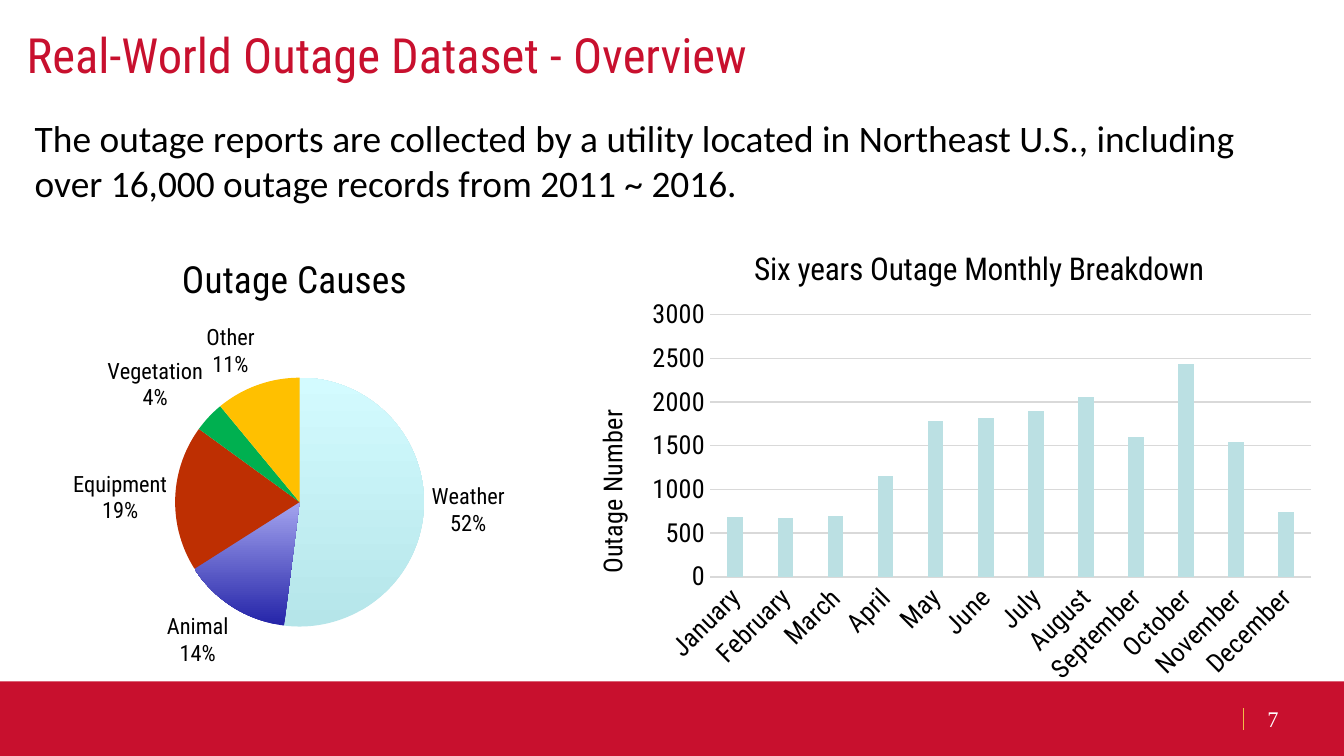
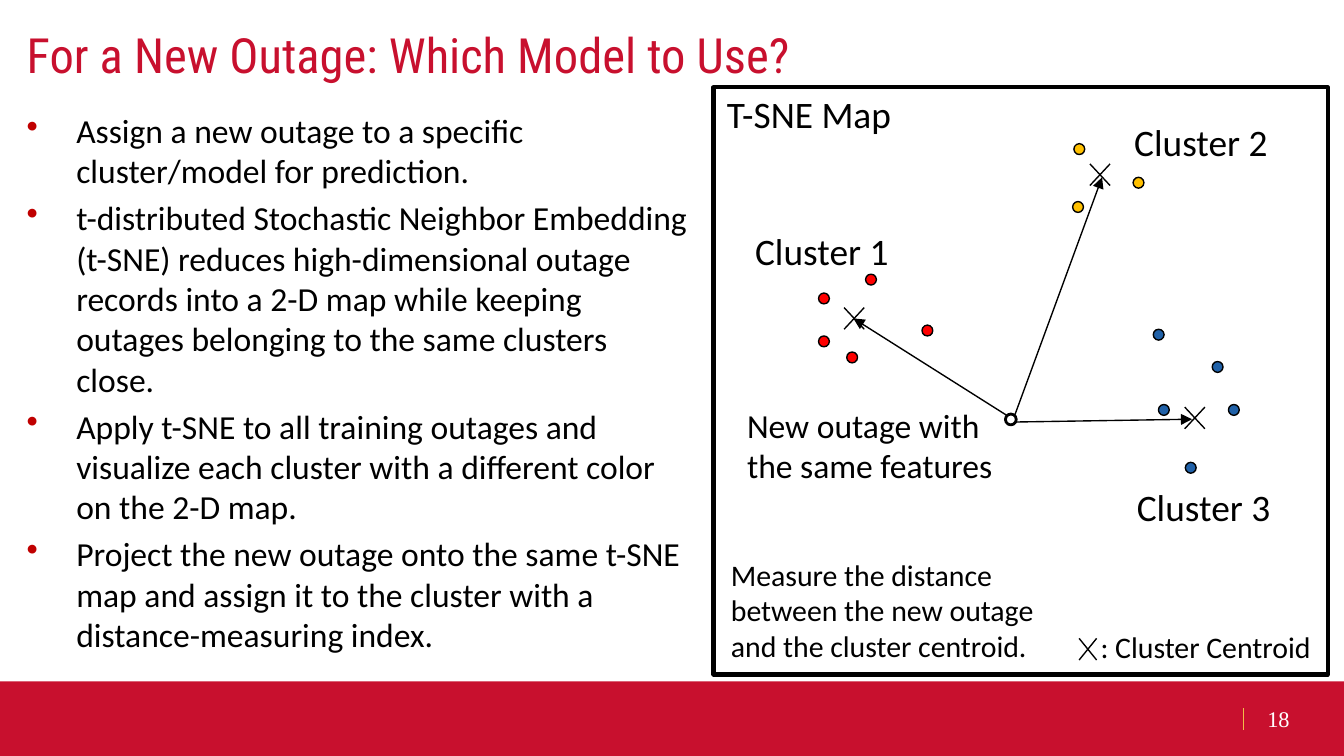
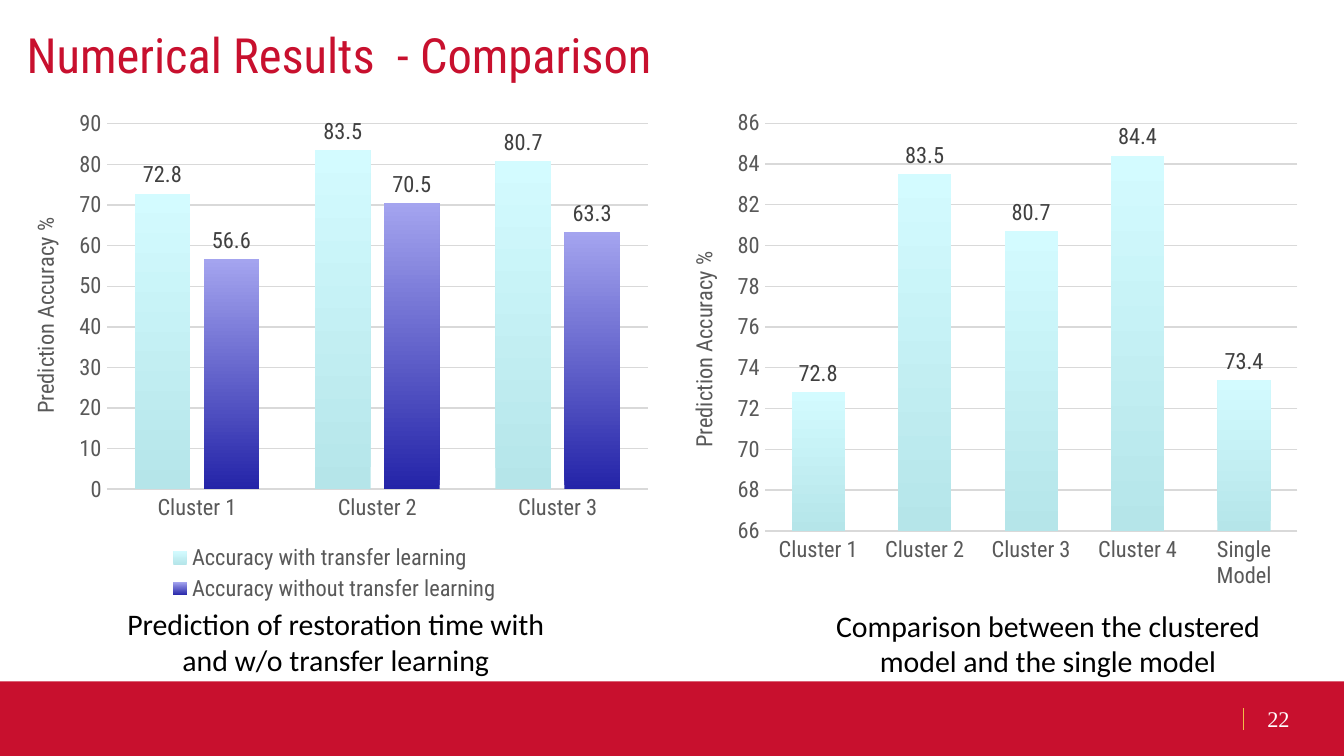
import pptx
import pptx.chart.data
import pptx.dml.color
import pptx.enum.chart
import pptx.enum.shapes
import pptx.enum.text
import pptx.oxml.ns
import pptx.oxml.xmlchemy
import pptx.util
from lxml import etree

Pt = pptx.util.Pt
qn = pptx.oxml.ns.qn
CHART = pptx.enum.chart.XL_CHART_TYPE
SHAPE = pptx.enum.shapes.MSO_SHAPE

COLORS = {
    "cardinal": "C8102E", "gold": "F1BE48", "white": "FFFFFF", "black": "000000",
    "bullet": "C00000", "grid": "D9D9D9", "axis": "595959", "label": "404040",
    "red": "FF0000", "yellow": "FFC000", "blue": "2061A8",
    "rust": "BE2F02", "green": "00B050", "teal": "BBE0E3",
    "ice dark": "B5E5E9", "ice light": "D3FBFF",
    "indigo dark": "2424A8", "indigo light": "A4A4EF",
}
ICE = ("ice dark", "ice light")
INDIGO = ("indigo dark", "indigo light")
HEADING, BODY, NUMBER = "Roboto Condensed", "Calibri", "Times New Roman"
DOT = 5.8


def rgb(name):
    return pptx.dml.color.RGBColor.from_string(COLORS[name])


def set_font(font, size, color="black", face=HEADING):
    font.size, font.name, font.bold = Pt(size), face, False
    font.color.rgb = rgb(color)


def set_fill(fill, color):
    """Fill with one colour, or upwards from the first of a pair to the second."""
    if isinstance(color, tuple):
        fill.gradient()
        fill.gradient_angle = 90
        for stop, name in zip(fill.gradient_stops, color):
            stop.color.rgb = rgb(name)
    else:
        fill.solid()
        fill.fore_color.rgb = rgb(color)


def set_line(line, color, width):
    line.color.rgb = rgb(color)
    line.width = Pt(width)


def place(parent, inner=False, **fractions):
    """Fix a chart part at fractions of the chart's size."""
    layout = parent.find(qn("c:layout"))
    if layout is None:
        layout = etree.Element(qn("c:layout"))
        parent.insert(0 if inner else 1, layout)
    manual = etree.SubElement(layout, qn("c:manualLayout"))
    settings = {"layoutTarget": "inner"} if inner else {}
    settings.update(xMode="edge", yMode="edge", **fractions)
    for key, value in settings.items():
        etree.SubElement(manual, qn("c:" + key)).set("val", str(value))


def turn(element, query, degrees):
    for body in element.xpath(query):
        body.set("rot", str(degrees * 60000))
        body.set("vert", "horz")


class Deck:
    def __init__(self):
        self.show = pptx.Presentation()
        self.show.slide_width, self.show.slide_height = Pt(720), Pt(405)
        self.slide = None

    def start(self, title, number):
        self.slide = self.show.slides.add_slide(self.show.slide_layouts[6])
        self.shape(SHAPE.RECTANGLE, (0, 365, 720, 40), "cardinal")
        self.line((666, 379.4), (666, 391), "gold")
        page = self.text((671.8, 374.4, 41.8, 21.6), [str(number)], 12, "white", NUMBER)
        page.vertical_anchor = pptx.enum.text.MSO_ANCHOR.MIDDLE
        self.text((7.2, 10.1, 683.3, 36.7), [title], 26, "cardinal", HEADING)

    def text(self, box, lines, size, color="black", face=BODY, center=False,
             bullets=False, wrap=True):
        frame = self.slide.shapes.add_textbox(*map(Pt, box)).text_frame
        frame.word_wrap = wrap
        frame.text = "\n".join(lines)
        for index, paragraph in enumerate(frame.paragraphs):
            if center:
                paragraph.alignment = pptx.enum.text.PP_ALIGN.CENTER
            if bullets:
                if index:
                    paragraph.space_before = Pt(size * 0.2)
                self.bullet(paragraph)
            set_font(paragraph.runs[0].font, size, color, face)
        return frame

    def bullet(self, paragraph, indent=26.6):
        properties = paragraph._p.get_or_add_pPr()
        properties.set("marL", str(Pt(indent)))
        properties.set("indent", str(-Pt(indent)))
        tint = etree.SubElement(properties, qn("a:buClr"))
        etree.SubElement(tint, qn("a:srgbClr")).set("val", COLORS["bullet"])
        etree.SubElement(properties, qn("a:buChar")).set("char", "•")

    def shape(self, kind, box, fill=None, line=None, width=0.75):
        shape = self.slide.shapes.add_shape(kind, *map(Pt, box))
        shape.shadow.inherit = False
        if fill:
            set_fill(shape.fill, fill)
        else:
            shape.fill.background()
        if line:
            set_line(shape.line, line, width)
        else:
            shape.line.fill.background()

    def dot(self, left, top, color, width=0.75):
        self.shape(SHAPE.OVAL, (left, top, DOT, DOT), color, "black", width)

    def line(self, start, end, color="black", arrow=False):
        straight = pptx.enum.shapes.MSO_CONNECTOR.STRAIGHT
        line = self.slide.shapes.add_connector(straight, *map(Pt, start + end))
        set_line(line.line, color, 0.75)
        if arrow:
            tip = etree.SubElement(line.line._get_or_add_ln(), qn("a:tailEnd"))
            tip.set("type", "triangle")
        etree.SubElement(line._element.spPr, qn("a:effectLst"))

    def cross(self, x, y, half_width=5.4, half_height=5.8):
        for rise in (half_height, -half_height):
            self.line((x - half_width, y - rise), (x + half_width, y + rise))

    def chart(self, kind, box, categories, series, plot, title=None, size=10):
        """series maps names to values; plot is the inner area; title is (text, size, x, y)."""
        data = pptx.chart.data.CategoryChartData()
        data.categories = categories
        for name, values in series.items():
            data.add_series(name, values)
        chart = self.slide.shapes.add_chart(kind, *map(Pt, box), data).chart
        set_font(chart.font, size)
        chart.has_legend = False
        chart.has_title = title is not None
        space = chart._chartSpace
        if title:
            words, title_size, x, y = title
            chart.chart_title.text_frame.text = words
            set_font(chart.chart_title.text_frame.paragraphs[0].runs[0].font, title_size)
            place(space.xpath("c:chart/c:title")[0], x=x, y=y)
        x, y, w, h = plot
        place(space.xpath("c:chart/c:plotArea")[0], inner=True, x=x, y=y, w=w, h=h)
        return chart

    def columns(self, box, categories, series, fills, plot, scale, axis_title,
                gap, overlap, size=12, color="axis", axis_width=1, labels=True, title=None):
        chart = self.chart(CHART.COLUMN_CLUSTERED, box, categories, series, plot, title)
        bars = chart.plots[0]
        bars.vary_by_categories = False
        bars.gap_width, bars.overlap = gap, overlap
        for bar, fill in zip(bars.series, fills):
            set_fill(bar.format.fill, fill)
            bar.invert_if_negative = False
            if labels:
                self.labels(bar, "label").show_value = True
        for axis in (chart.category_axis, chart.value_axis):
            axis.major_tick_mark = axis.minor_tick_mark = pptx.enum.chart.XL_TICK_MARK.NONE
            set_font(axis.tick_labels.font, size, color)
        set_line(chart.category_axis.format.line, "grid", axis_width)
        value = chart.value_axis
        value.minimum_scale, value.maximum_scale, value.major_unit = scale
        value.format.line.fill.background()
        set_line(value.major_gridlines.format.line, "grid", 0.75)
        value.axis_title.text_frame.text = axis_title
        set_font(value.axis_title.text_frame.paragraphs[0].runs[0].font, size, color)
        turn(value._element, "c:title//a:bodyPr", -90)
        return chart

    def labels(self, series, color="black"):
        labels = series.data_labels
        labels.position = pptx.enum.chart.XL_LABEL_POSITION.OUTSIDE_END
        set_font(labels.font, 12, color)
        return labels


def dataset_overview(deck):
    deck.start("Real-World Outage Dataset - Overview", 7)
    deck.text((11.5, 58.3, 690.5, 137.5), [
        "The outage reports are collected by a utility located in Northeast U.S., "
        "including over 16,000 outage records from 2011 ~ 2016."], 20)

    # Causes
    causes = {"Weather": (52, ICE), "Animal": (14, INDIGO), "Equipment": (19, "rust"),
              "Vegetation": (4, "green"), "Other": (11, "yellow")}
    pie = deck.chart(CHART.PIE, (2.9, 117.4, 303.1, 254.9), list(causes),
                     {"Series 1": [share for share, _ in causes.values()]},
                     (0.3, 0.33, 0.44, 0.53), ("Outage Causes", 20, 0.3, 0.06))
    slices = pie.plots[0].series[0]
    for index, (_, fill) in enumerate(causes.values()):
        set_fill(slices.points[index].format.fill, fill)
    labels = deck.labels(slices)
    labels.show_value = False
    labels.show_category_name = labels.show_percentage = True
    separator = etree.Element(qn("c:separator"))
    separator.text = "\n"
    labels._element.find(qn("c:showBubbleSize")).addnext(separator)

    # Months
    months = ["January", "February", "March", "April", "May", "June", "July", "August",
              "September", "October", "November", "December"]
    outages = [680, 670, 700, 1150, 1780, 1820, 1900, 2060, 1600, 2430, 1540, 740]
    monthly = deck.columns(
        (303.1, 117.4, 407.5, 255.6), months, {"Series 1": outages}, ["teal"],
        (0.19, 0.2, 0.79, 0.55), (0, 3000, 500), "Outage Number", 219, -27,
        size=14, color="black", axis_width=0.75, labels=False,
        title=("Six years Outage Monthly Breakdown", 16.8, 0.24, 0.05))
    turn(monthly.category_axis._element, "c:txPr/a:bodyPr", -45)


def model_choice(deck):
    deck.start("For a New Outage: Which Model to Use?", 18)
    deck.text((7.2, 55.4, 370, 297.4), [
        "Assign a new outage to a specific cluster/model for prediction.",
        "t-distributed Stochastic Neighbor Embedding (t-SNE) reduces high-dimensional outage "
        "records into a 2-D map while keeping outages belonging to the same clusters close.",
        "Apply t-SNE to all training outages and visualize each cluster with a different "
        "color on the 2-D map.",
        "Project the new outage onto the same t-SNE map and assign it to the cluster with a "
        "distance-measuring index.",
    ], 18, bullets=True)

    # Map frame and names
    deck.shape(SHAPE.RECTANGLE, (382.3, 46.8, 329, 314.6), line="black", width=2.25)
    deck.text((382.3, 45.4, 105.1, 31.7), ["T-SNE Map"], 20, wrap=False)
    names = [(397.4, 118.8), (600.5, 60.5), (601.9, 255.6)]
    for number, corner in enumerate(names, 1):
        deck.text((*corner, 87.1, 31.7), [f"Cluster {number}"], 20, wrap=False)

    # Clustered outages
    clusters = {
        "red": [(438.5, 157), (493.9, 174.2), (438.5, 180), (463.7, 146.9), (453.6, 188.6)],
        "yellow": [(575.3, 77), (574.6, 108), (607, 95)],
        "blue": [(658.1, 216.7), (620.6, 216.7), (649.4, 193.7), (635, 247.7),
                 (617.8, 176.4)],
    }
    for color, outages in clusters.items():
        for left, top in outages:
            deck.dot(left, top, color)

    # New outage and its distances
    deck.dot(538.6, 221.8, "white", 1.5)
    for start, end in [((539.3, 222.5), (457.2, 170.6)), ((543.6, 222.5), (590.4, 95)),
                       ((543.6, 226.1), (638.6, 224.6))]:
        deck.line(start, end, arrow=True)
    deck.text((393.1, 213.1, 164.2, 51.1), ["New outage with the same features"], 18)
    deck.text((384.5, 294.5, 187.9, 65.5), [
        "Measure the distance between the new outage and the cluster centroid."], 16)

    # Centroids, the last one in the key
    for center in [(457.6, 170.6), (589.3, 93.6), (640.1, 223.9)]:
        deck.cross(*center)
    deck.cross(582.8, 347.8, half_width=4.7)
    deck.text((582.5, 333.4, 128.9, 26.6), [": Cluster Centroid"], 16)


def comparison(deck):
    deck.start("Numerical Results  - Comparison", 22)
    deck.text((51.8, 321.1, 256.3, 46.1), [
        "Prediction of restoration time with and w/o transfer learning"], 16, center=True)
    deck.text((422.6, 321.8, 277.9, 46.1), [
        "Comparison between the clustered model and the single model"], 16, center=True)

    # Transfer learning
    clusters = [f"Cluster {number}" for number in range(1, 5)]
    transfer = deck.columns(
        (0.7, 55.4, 353.5, 272.2), clusters[:3],
        {"Accuracy with transfer learning": [72.8, 83.5, 80.7],
         "Accuracy without transfer learning": [56.6, 70.5, 63.3]},
        [ICE, INDIGO], (0.16, 0.04, 0.82, 0.72), (0, 90, 10),
        "Prediction Accuracy %", 100, -24)
    transfer.has_legend = True
    transfer.legend.position = pptx.enum.chart.XL_LEGEND_POSITION.BOTTOM
    transfer.legend.include_in_layout = False
    set_font(transfer.legend.font, 12, "axis")
    place(transfer.legend._element, x=0.25, y=0.86, w=0.51, h=0.13)

    # Clustered against single model
    deck.columns(
        (354.2, 55.4, 347.8, 266.4), clusters + ["Single Model"],
        {"Series 1": [72.8, 83.5, 80.7, 84.4, 73.4]}, [ICE],
        (0.16, 0.04, 0.82, 0.82), (66, 86, 2), "Prediction Accuracy %", 100, -24)


def main():
    deck = Deck()
    dataset_overview(deck)
    model_choice(deck)
    comparison(deck)
    deck.show.save("out.pptx")


if __name__ == "__main__":
    main()
